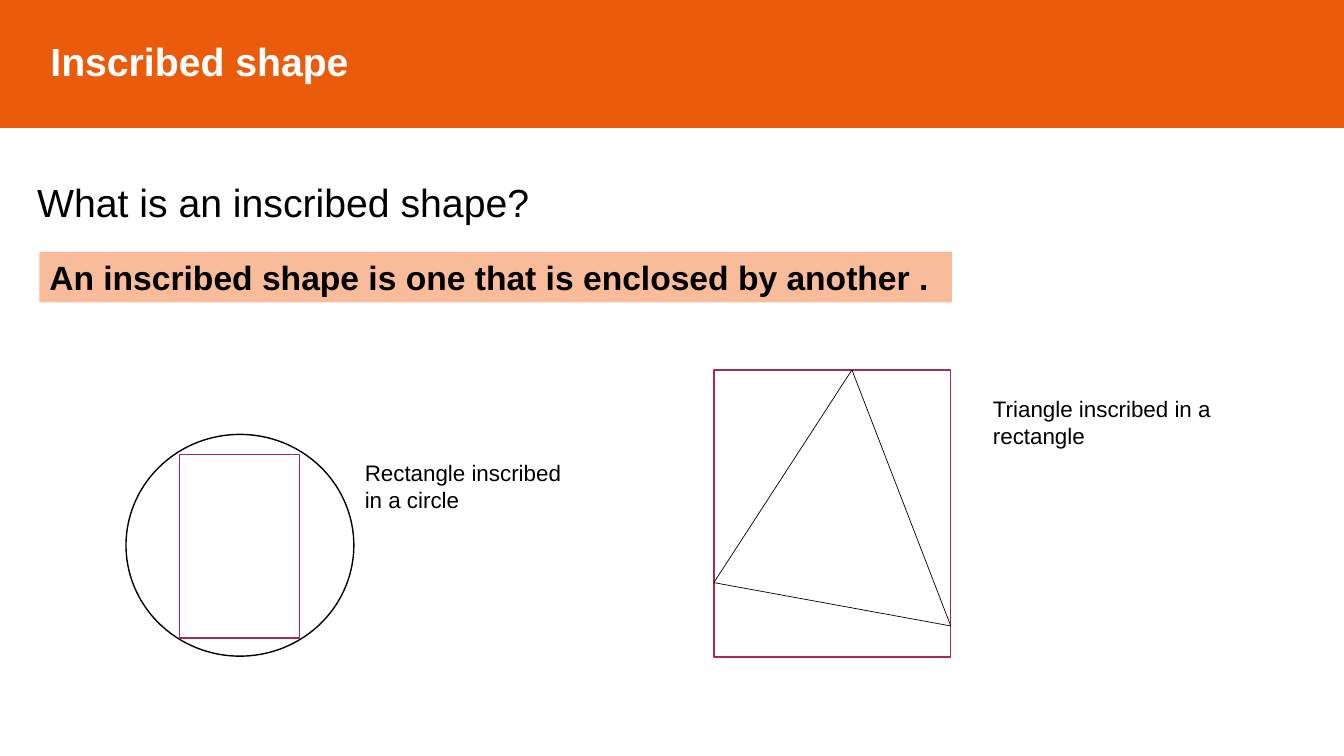
from pptx import Presentation
from pptx.dml.color import RGBColor
from pptx.enum.shapes import MSO_CONNECTOR, MSO_SHAPE
from pptx.enum.text import MSO_ANCHOR, PP_ALIGN
from pptx.oxml.ns import qn
from pptx.util import Inches, Pt
from lxml.etree import SubElement

TITLE = "Inscribed shape"
ORANGE, PEACH, CRIMSON = "EA5B0C", "F9BC9A", "AD2851"
BLACK, WHITE = "000000", "FFFFFF"

# text, (left, top, width, height), size, bold, fill
TEXTS = [
    ("What is an inscribed shape?", (0.27, 1.72, 9.53, 0.94), 28, False, None),
    ("An inscribed shape is one that is enclosed by another .",
     (0.39, 2.5, 9.05, 0.5), 24, True, PEACH),
    ("Rectangle inscribed in a circle", (3.52, 4.51, 2.37, 0.64), 16, False, None),
    ("Triangle inscribed in a rectangle", (9.75, 3.87, 2.37, 0.64), 16, False, None),
]

# preset, (left, top, width, height), line colour
OUTLINES = [
    (MSO_SHAPE.OVAL, (1.25, 4.31, 2.26, 2.2), BLACK),
    (MSO_SHAPE.RECTANGLE, (1.78, 4.51, 1.19, 1.82), CRIMSON),
    (MSO_SHAPE.RECTANGLE, (7.08, 3.67, 2.35, 2.85), CRIMSON),
]
TRIANGLE = [(7.08, 5.78), (8.45, 3.67), (9.43, 6.21)]


def color(hex_code):
    return RGBColor.from_string(hex_code)


def inches(values):
    return [Inches(value) for value in values]


def paint(shape, fill, line):
    shape.fill.solid()
    shape.fill.fore_color.rgb = color(fill)
    shape.line.color.rgb = color(line)
    shape.line.width = Pt(1)


def write(shape, text, size, bold, text_color):
    frame = shape.text_frame
    frame.word_wrap = True
    frame.text = text
    para = frame.paragraphs[0]
    para.alignment = PP_ALIGN.LEFT
    font = para.runs[0].font
    font.name, font.size, font.bold = "Arial", Pt(size), bold
    font.color.rgb = color(text_color)


def add_title(page):
    title = page.shapes.title
    title.left, title.top, title.width, title.height = inches((0, -0.06, 13.33, 1.32))
    paint(title, ORANGE, ORANGE)
    write(title, TITLE, 28, True, WHITE)
    title.text_frame.margin_left = Inches(0.5)
    title.text_frame.vertical_anchor = MSO_ANCHOR.MIDDLE


def add_text(page, text, place, size, bold, fill):
    box = page.shapes.add_textbox(*inches(place))
    if fill:
        box.fill.solid()
        box.fill.fore_color.rgb = color(fill)
    write(box, text, size, bold, BLACK)


def add_outline(page, preset, place, line):
    shape = page.shapes.add_shape(preset, *inches(place))
    shape.shadow.inherit = False
    paint(shape, WHITE, line)


def add_side(page, start, end):
    side = page.shapes.add_connector(MSO_CONNECTOR.STRAIGHT, *inches(start + end))
    side.line.color.rgb = color(BLACK)
    side.line.width = Pt(0.5)
    SubElement(side._element.spPr, qn("a:effectLst"))


def main():
    deck = Presentation()
    deck.slide_width, deck.slide_height = inches((13.33, 7.5))
    page = deck.slides.add_slide(deck.slide_layouts[5])
    add_title(page)
    for outline in OUTLINES:
        add_outline(page, *outline)
    for start, end in zip(TRIANGLE, TRIANGLE[1:] + TRIANGLE[:1]):
        add_side(page, start, end)
    for text in TEXTS:
        add_text(page, *text)
    deck.save("out.pptx")


if __name__ == "__main__":
    main()
